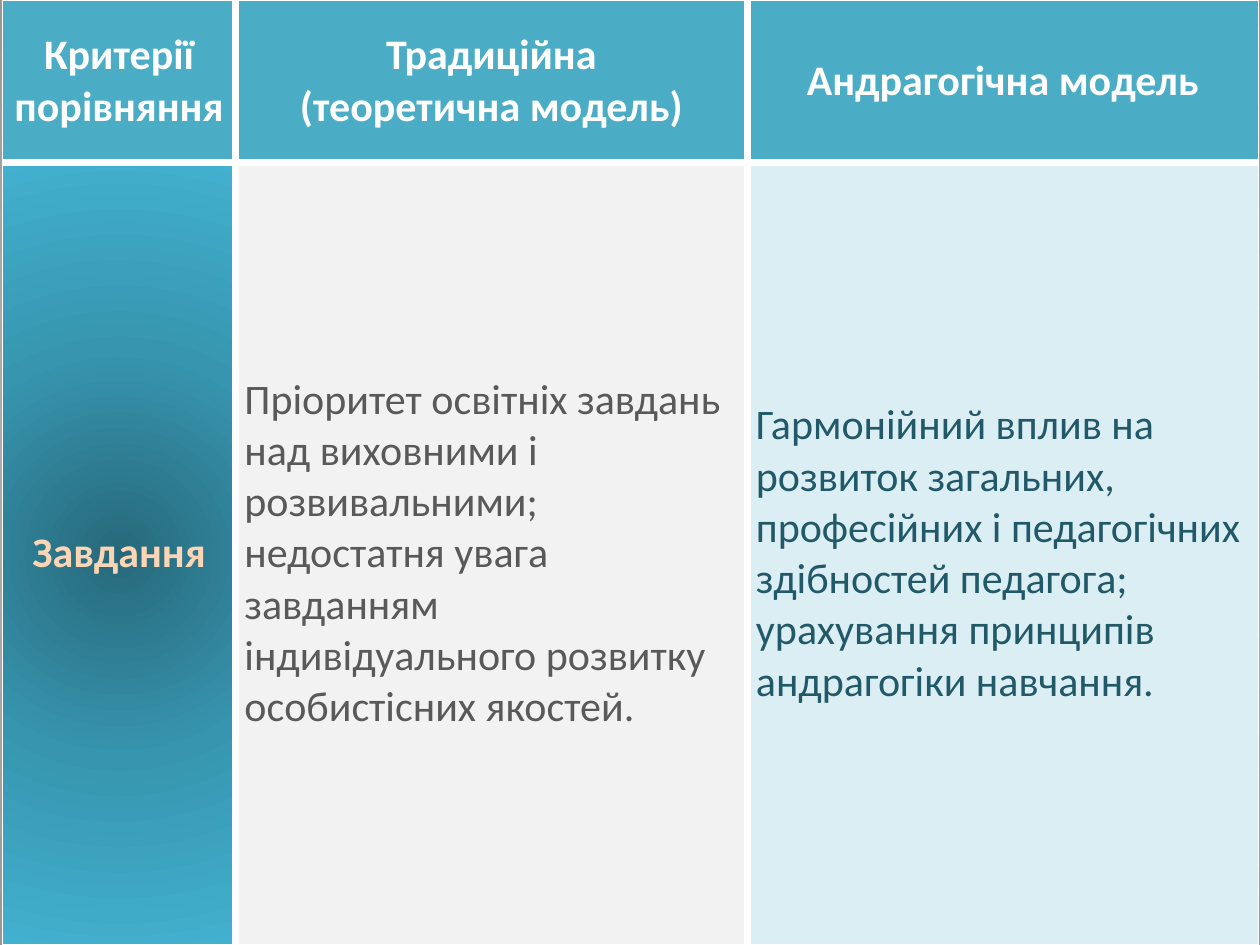
from lxml import etree
from pptx import Presentation
from pptx.dml.color import RGBColor
from pptx.enum import text
from pptx.oxml.ns import qn
from pptx.util import Inches, Pt


def rgb(value):
    return RGBColor.from_string(value)


def radial(parent, stops):
    grad = etree.Element(qn("a:gradFill"), rotWithShape="1")
    gs_lst = etree.SubElement(grad, qn("a:gsLst"))
    for pos, color in stops:
        gs = etree.SubElement(gs_lst, qn("a:gs"), pos=str(pos * 1000))
        etree.SubElement(gs, qn("a:srgbClr"), val=color)
    path = etree.SubElement(grad, qn("a:path"), path="circle")
    etree.SubElement(path, qn("a:fillToRect"), l="50000", t="50000", r="50000", b="50000")
    parent.replace(parent.find(qn("a:solidFill")), grad)


prs = Presentation()
prs.slide_width, prs.slide_height = Inches(10), Inches(7.5)
s = prs.slides.add_slide(prs.slide_layouts[6])
s.background.fill.solid()
radial(s.background.fill._xPr, [(0, "FFFFFF"), (100, "979797")])

widths = [1.85, 4.06, 4.06]
heights = [1.29, 6.21]
center, left = text.PP_ALIGN.CENTER, text.PP_ALIGN.LEFT
rows = [
    [
        ("Критерії порівняння", "4BACC6", "FFFFFF", True, center),
        ("Традиційна\n(теоретична модель)", "4BACC6", "FFFFFF", True, center),
        ("Андрагогічна модель", "4BACC6", "FFFFFF", True, center),
    ],
    [
        ("Завдання", "42B1CF", "FCD5B5", True, center),
        ("Пріоритет освітніх завдань над виховними і розвивальними; недостатня увага "
         "завданням індивідуального розвитку особистісних якостей.",
         "F2F2F2", "595959", False, left),
        ("Гармонійний вплив на розвиток загальних, професійних і педагогічних здібностей "
         "педагога; урахування принципів андрагогіки навчання.",
         "DBEEF4", "215968", False, left),
    ],
]
cell_format = {
    "margin_left": Inches(0.07),
    "margin_right": Inches(0.07),
    "margin_top": 0,
    "margin_bottom": 0,
    "vertical_anchor": text.MSO_ANCHOR.MIDDLE,
}

table = s.shapes.add_table(
    len(heights), len(widths), Inches(0.02), 0, Inches(sum(widths)), Inches(sum(heights))
).table
table.horz_banding = False
for column, width in zip(table.columns, widths):
    column.width = Inches(width)
for row, height in zip(table.rows, heights):
    row.height = Inches(height)

for i, row in enumerate(rows):
    for j, (words, fill, color, bold, align) in enumerate(row):
        cell = table.cell(i, j)
        for name, value in cell_format.items():
            setattr(cell, name, value)
        cell.fill.solid()
        cell.fill.fore_color.rgb = rgb(fill)
        cell.text_frame.text = words
        for p in cell.text_frame.paragraphs:
            p.alignment = align
            font = p.runs[0].font
            for name, value in {"name": "Calibri", "size": Pt(24), "bold": bold}.items():
                setattr(font, name, value)
            font.color.rgb = rgb(color)
        tc_pr = cell._tc.get_or_add_tcPr()
        outer = {
            "lnL": j == 0,
            "lnR": j == len(widths) - 1,
            "lnT": i == 0,
            "lnB": i == len(heights) - 1,
        }
        for k, (tag, is_outer) in enumerate(outer.items()):
            ln = etree.Element(qn(f"a:{tag}"), w=str(Pt(1 if is_outer else 4.5)))
            solid = etree.SubElement(ln, qn("a:solidFill"))
            etree.SubElement(solid, qn("a:srgbClr"), val="FFFFFF")
            tc_pr.insert(k, ln)

radial(table.cell(1, 0)._tc.tcPr, [(0, "27697B"), (50, "3795AF"), (100, "42B1CF")])

prs.save("out.pptx")
